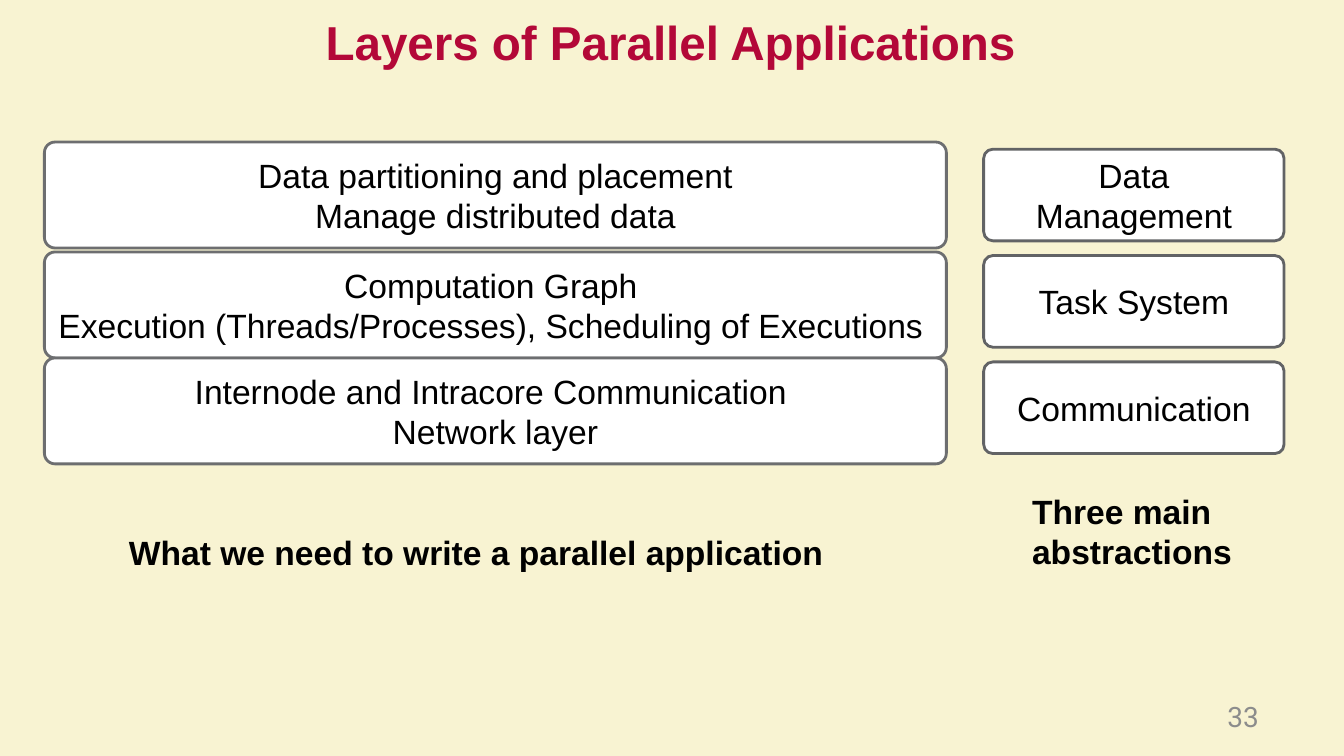
from pptx import Presentation
from pptx.dml.color import RGBColor
from pptx.enum.shapes import MSO_SHAPE
from pptx.enum.text import MSO_ANCHOR, PP_ALIGN
from pptx.util import Cm, Pt

# Content
TITLE = "Layers of Parallel Applications"
PAGE = "33"
LAYERS = [  # top in cm, lines
    (3.58, ["Data partitioning and placement", "Manage distributed data"]),
    (6.35, ["Computation Graph ",
            "Execution (Threads/Processes), Scheduling of Executions "]),
    (9.02, ["Internode and Intracore Communication ", "Network layer"]),
]
ABSTRACTIONS = ["Data Management", "Task System", "Communication"]
CAPTIONS = [  # left, top, width, height in cm, wrap, lines
    (3.0, 13.28, 18.14, 1.27, True,
     ["What we need to write a parallel application"]),
    (25.76, 12.24, 5.59, 2.31, False, ["Three main", "abstractions"]),
]
COLORS = {"back": "F8F3D2", "title": "B30838", "page": "8C8C8C",
          "box": "FFFFFF", "text": "000000",
          "layer": "6D6E70", "abstraction": "626365"}


def color(name):
    return RGBColor.from_string(COLORS[name])


def write(tf, lines, size=24, ink="text", font="Arial", bold=False,
          align=PP_ALIGN.LEFT):
    for i, line in enumerate(lines):
        p = tf.add_paragraph() if i else tf.paragraphs[0]
        p.alignment = align
        r = p.add_run()
        r.text = line
        r.font.name, r.font.size, r.font.bold = font, Pt(size), bold
        r.font.color.rgb = color(ink)


def add_box(s, left, top, width, height, border, lines):
    sp = s.shapes.add_shape(MSO_SHAPE.ROUNDED_RECTANGLE,
                            Cm(left), Cm(top), Cm(width), Cm(height))
    sp.adjustments[0] = 0.1
    sp.shadow.inherit = False
    sp.fill.solid()
    sp.fill.fore_color.rgb = color("box")
    sp.line.color.rgb = color(border)
    sp.line.width = Pt(2)
    sp.text_frame.word_wrap = True
    sp.text_frame.vertical_anchor = MSO_ANCHOR.MIDDLE
    write(sp.text_frame, lines, align=PP_ALIGN.CENTER)


def add_label(s, left, top, width, height, wrap, lines, **style):
    sp = s.shapes.add_textbox(Cm(left), Cm(top), Cm(width), Cm(height))
    sp.text_frame.word_wrap = wrap
    write(sp.text_frame, lines, **style)


def main():
    prs = Presentation()
    prs.slide_width, prs.slide_height = Cm(33.87), Cm(19.05)
    s = prs.slides.add_slide(prs.slide_layouts[5])
    s.background.fill.solid()
    s.background.fill.fore_color.rgb = color("back")

    # Title and page number
    title = s.shapes.title
    title.left, title.top = Cm(0), Cm(0)
    title.width, title.height = Cm(33.81), Cm(2.11)
    title.text_frame.vertical_anchor = MSO_ANCHOR.MIDDLE
    write(title.text_frame, [TITLE], size=34, ink="title", bold=True,
          align=PP_ALIGN.CENTER)
    add_label(s, 30.68, 17.5, 2.44, 0.81, True, [PAGE],
              size=20, ink="page", font="Roboto")

    # Application layers on the left
    for top, lines in LAYERS:
        add_box(s, 1.12, top, 22.73, 2.67, "layer", lines)

    # Matching abstractions on the right
    for i, name in enumerate(ABSTRACTIONS):
        add_box(s, 24.79, 3.76 + 2.68 * i, 7.57, 2.31, "abstraction", [name])

    # Captions under both columns
    for caption in CAPTIONS:
        add_label(s, *caption, bold=True)

    prs.save("out.pptx")


if __name__ == "__main__":
    main()
